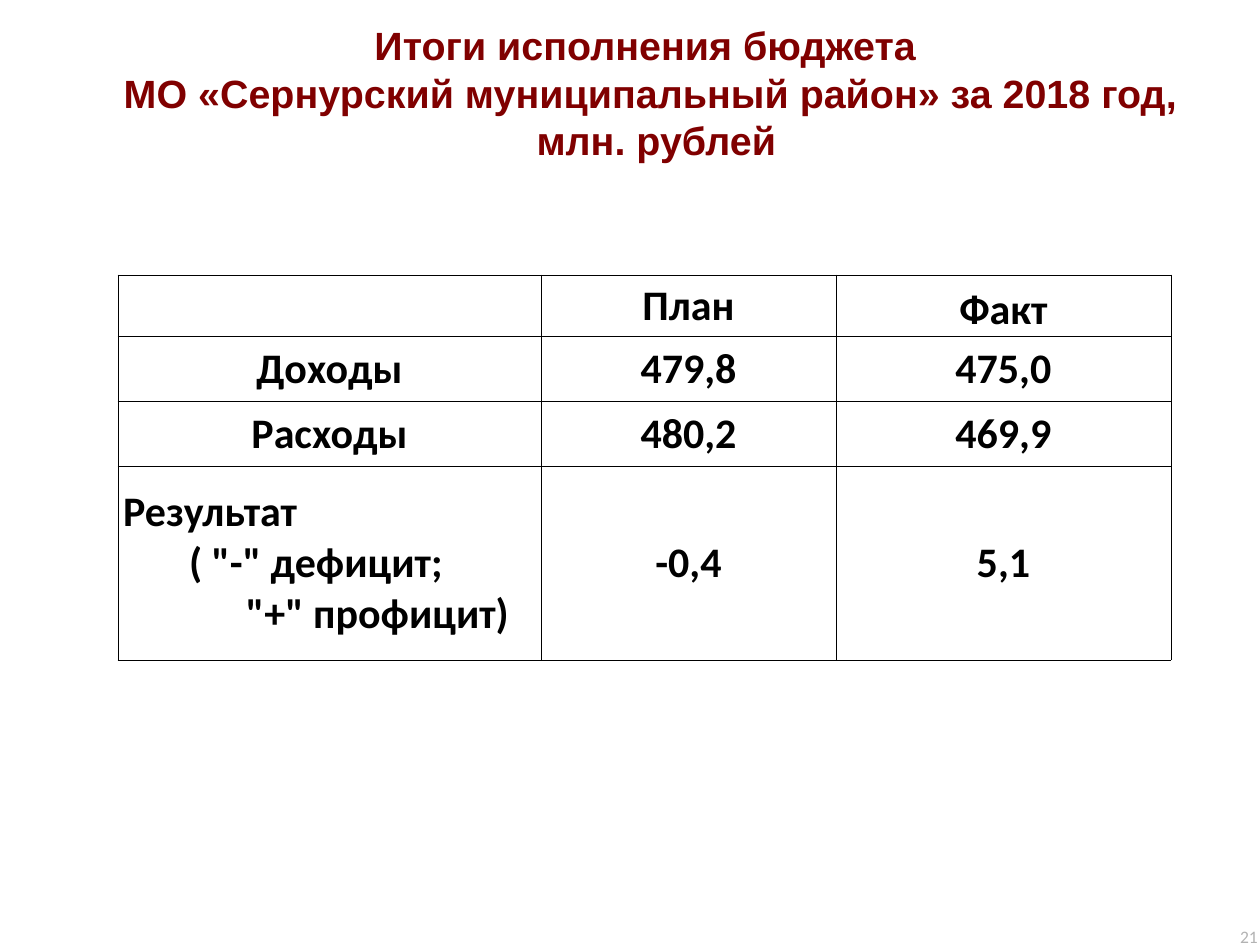
from lxml.etree import SubElement
from pptx import Presentation
from pptx.dml.color import RGBColor
from pptx.enum.text import MSO_ANCHOR, PP_ALIGN
from pptx.oxml.ns import qn
from pptx.util import Pt

PX = 914400 / 126
MAROON = RGBColor(0x80, 0x00, 0x00)
BLACK = RGBColor(0x00, 0x00, 0x00)
GREY = RGBColor(0xB3, 0xB3, 0xB3)

TITLE_LINES = [
    "Итоги исполнения бюджета ",
    "МО «Сернурский муниципальный район» за 2018 год,",
    " млн. рублей",
]
COLUMN_WIDTHS = [423, 295, 335]
ROW_HEIGHTS = [61, 65, 65, 194]
BUDGET_ROWS = [
    ["", "План", "Факт"],
    ["Доходы", "479,8", "475,0"],
    ["Расходы", "480,2", "469,9"],
    ['Результат\n( "-" дефицит;\n"+" профицит)', "-0,4", "5,1"],
]
RESULT_INDENTS = [4, 70, 127]


def px(length):
    return round(length * PX)


def style_para(para, font_name, size, color, bold, align):
    para.alignment = align
    para.font.name = font_name
    para.font.size = Pt(size)
    para.font.bold = bold
    para.font.color.rgb = color


def place_title(slide):
    title = slide.shapes.title
    title.left, title.top, title.width, title.height = map(px, (19, 20, 1264, 145))
    frame = title.text_frame
    frame.word_wrap = True
    frame.vertical_anchor = MSO_ANCHOR.MIDDLE
    frame.text = "\v".join(TITLE_LINES)
    style_para(frame.paragraphs[0], "Arial", 22.5, MAROON, True, PP_ALIGN.CENTER)


def add_page_number(slide):
    box = slide.shapes.add_textbox(*map(px, (1226, 917, 44, 39)))
    frame = box.text_frame
    frame.word_wrap = True
    frame.vertical_anchor = MSO_ANCHOR.MIDDLE
    frame.text = "21"
    style_para(frame.paragraphs[0], "Calibri", 10, GREY, False, PP_ALIGN.RIGHT)


def add_borders(cell):
    """Draw thin black lines on all four sides, ahead of the cell's fill."""
    properties = cell._tc.get_or_add_tcPr()
    for position, side in enumerate(("a:lnL", "a:lnR", "a:lnT", "a:lnB")):
        line = SubElement(properties, qn(side), w=str(Pt(0.5)))
        fill = SubElement(line, qn("a:solidFill"))
        SubElement(fill, qn("a:srgbClr"), val=str(BLACK))
        properties.insert(position, line)


def fill_cell(cell, text):
    cell.fill.background()
    add_borders(cell)
    cell.margin_left = cell.margin_right = cell.margin_top = px(1)
    cell.margin_bottom = 0
    cell.vertical_anchor = MSO_ANCHOR.MIDDLE
    cell.text = text
    for para in cell.text_frame.paragraphs:
        style_para(para, "Calibri", 24, BLACK, True, PP_ALIGN.CENTER)


def add_budget_table(slide):
    frame = slide.shapes.add_table(
        len(ROW_HEIGHTS), len(COLUMN_WIDTHS), px(118), px(275),
        px(sum(COLUMN_WIDTHS)), px(sum(ROW_HEIGHTS)))
    table = frame.table
    table.first_row = table.horz_banding = False
    for column, width in zip(table.columns, COLUMN_WIDTHS):
        column.width = px(width)
    for row, height, texts in zip(table.rows, ROW_HEIGHTS, BUDGET_ROWS):
        row.height = px(height)
        for cell, text in zip(row.cells, texts):
            fill_cell(cell, text)
    table.cell(0, 2).vertical_anchor = MSO_ANCHOR.BOTTOM
    result_paras = table.cell(3, 0).text_frame.paragraphs
    for para, indent in zip(result_paras, RESULT_INDENTS):
        para.alignment = PP_ALIGN.LEFT
        para._p.get_or_add_pPr().set("marL", str(px(indent)))


def main():
    deck = Presentation()
    deck.slide_width, deck.slide_height = px(1260), px(945)
    slide = deck.slides.add_slide(deck.slide_layouts[5])
    place_title(slide)
    add_page_number(slide)
    add_budget_table(slide)
    deck.save("out.pptx")


if __name__ == "__main__":
    main()
